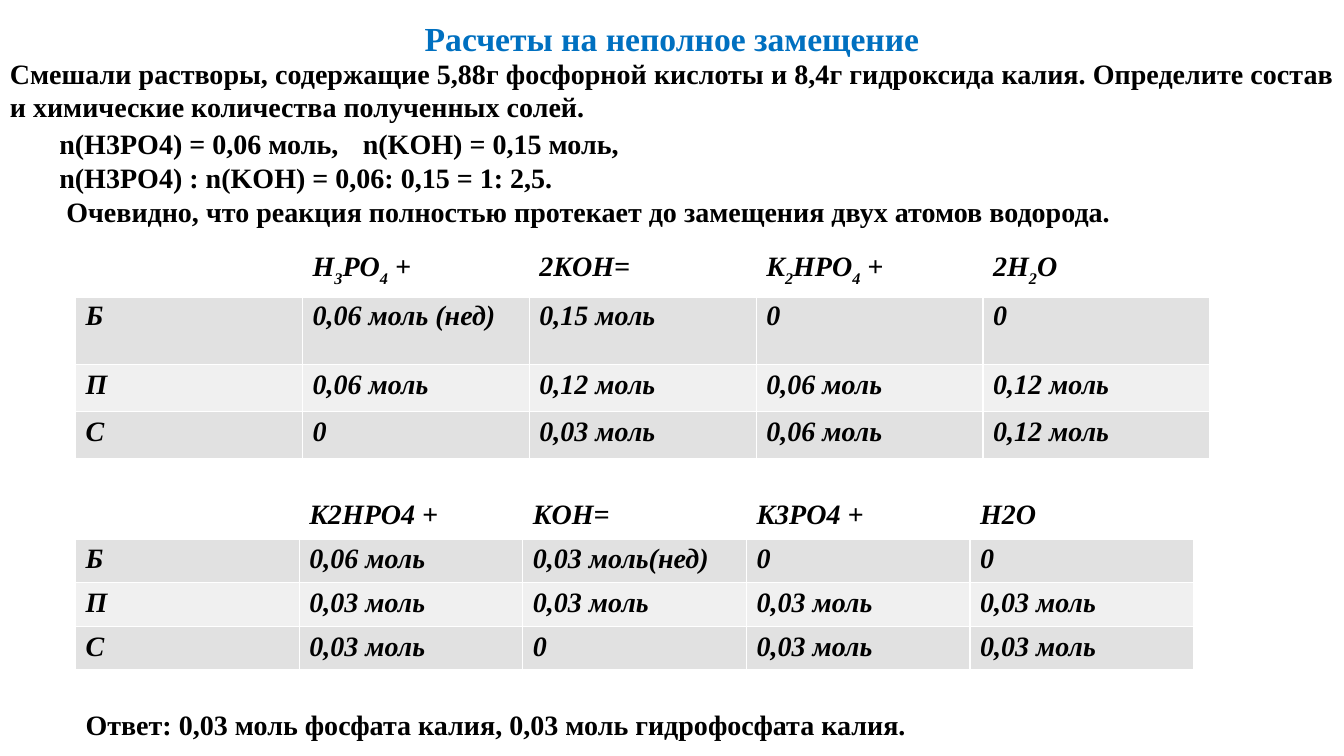
from lxml.etree import SubElement as Sub
from pptx import Presentation
from pptx.dml.color import RGBColor as Rgb
from pptx.enum.text import MSO_ANCHOR as Anchor, MSO_AUTO_SIZE as Auto, PP_ALIGN as Align
from pptx.oxml.ns import qn
from pptx.util import Inches, Pt

HUES = {"ink": "000000", "title": "0070C0", "white": "FFFFFF", "dark": "E1E1E1", "light": "F0F0F0"}
FIRST = [
    ["", "H_3PO_4 +", "2KOH=", "K_2HPO_4 +", "2H_2O"],
    ["Б", "0,06 моль (нед)", "0,15 моль", "0", "0"],
    ["П", "0,06 моль", "0,12 моль", "0,06 моль", "0,12 моль"],
    ["С", "0", "0,03 моль", "0,06 моль", "0,12 моль"],
]
SECOND = [
    ["", "K2HPO4 +", "KOH=", "K3PO4 +", "H2O"],
    ["Б", "0,06 моль", "0,03 моль(нед)", "0", "0"],
    ["П", "0,03 моль", "0,03 моль", "0,03 моль", "0,03 моль"],
    ["С", "0,03 моль", "0", "0,03 моль", "0,03 моль"],
]


def write(par, text, size=20, hue="ink", italic=False, align=Align.JUSTIFY, indent=0, tab=0):
    """Fill a paragraph; the character after each underscore becomes a subscript."""
    par.alignment = align
    props = par._p.get_or_add_pPr()
    if indent:
        props.set("indent", str(Inches(indent)))
    if tab:
        Sub(Sub(props, qn("a:tabLst")), qn("a:tab"), pos=str(Inches(tab)), algn="l")
    head, *rest = text.split("_")
    parts = [(head, False)]
    for part in rest:
        parts += [(part[0], True), (part[1:], False)]
    for part, low in parts:
        if not part:
            continue
        run = par.add_run()
        run.text = part
        font = run.font
        font.name, font.size, font.bold, font.italic = "Times New Roman", Pt(size), True, italic
        font.color.rgb = Rgb.from_string(HUES[hue])
        if low:
            run._r.get_or_add_rPr().set("baseline", "-30000")


def edge(cell, base):
    """Draw white borders round a cell, the bottom one base points wide."""
    props = cell._tc.get_or_add_tcPr()
    for side, width in zip("LRTB", (1, 1, 1, base)):
        line = Sub(props, qn(f"a:ln{side}"), w=str(Pt(width)))
        Sub(Sub(line, qn("a:solidFill")), qn("a:srgbClr"), val=HUES["white"])


class Page:
    def __init__(self, deck):
        self.slide = deck.slides.add_slide(deck.slide_layouts[5])

    def title(self, text, box):
        shape = self.slide.shapes.title
        shape.left, shape.top, shape.width, shape.height = map(Inches, box)
        frame = shape.text_frame
        frame.vertical_anchor, frame.auto_size = Anchor.TOP, Auto.NONE
        write(frame.paragraphs[0], text, size=24, hue="title", align=Align.CENTER)

    def text(self, lines, box):
        """Add a text box from pairs of text and paragraph format."""
        frame = self.slide.shapes.add_textbox(*map(Inches, box)).text_frame
        frame.word_wrap = True
        for i, (line, form) in enumerate(lines):
            par = frame.add_paragraph() if i else frame.paragraphs[0]
            write(par, line, **form)

    def table(self, rows, top, width, heights):
        shape = self.slide.shapes.add_table(
            len(rows), len(rows[0]), Inches(0.75), Inches(top),
            Inches(width), Inches(sum(heights)))
        grid = shape.table
        for r, row in enumerate(rows):
            grid.rows[r].height = Inches(heights[r])
            hue = "white" if r == 0 else "dark" if r % 2 else "light"
            for c, text in enumerate(row):
                cell = grid.cell(r, c)
                edge(cell, 1 if r else 3)
                cell.fill.solid()
                cell.fill.fore_color.rgb = Rgb.from_string(HUES[hue])
                write(cell.text_frame.paragraphs[0], text, italic=True)


def main():
    deck = Presentation()
    deck.slide_width, deck.slide_height = Inches(13.33), Inches(7.5)
    page = Page(deck)
    page.title("Расчеты на неполное замещение", (0, 0.13, 13.33, 0.48))
    page.text([("Смешали растворы, содержащие 5,88г фосфорной кислоты и 8,4г гидроксида калия. "
                "Определите состав и химические количества полученных солей.", {})],
              (0, 0.51, 13.33, 0.8))
    page.text([("n(H3PO4) = 0,06 моль,\tn(KOH) = 0,15 моль,", {"indent": 0.49, "tab": 3.88}),
               ("n(H3PO4) : n(KOH) = 0,06: 0,15 = 1: 2,5.", {"indent": 0.49}),
               ("Очевидно, что реакция полностью протекает до замещения двух атомов водорода.",
                {"indent": 0.56})],
              (0, 1.21, 13.33, 1.45))
    page.table(FIRST, 2.44, 11.25, [0.47, 0.68, 0.47, 0.47])
    page.table(SECOND, 4.91, 11.09, [0.43] * 4)
    page.text([("Ответ: 0,03 моль фосфата калия, 0,03 моль гидрофосфата калия.",
                {"align": Align.LEFT})], (0.75, 6.97, 11.83, 0.43))
    deck.save("out.pptx")


if __name__ == "__main__":
    main()
